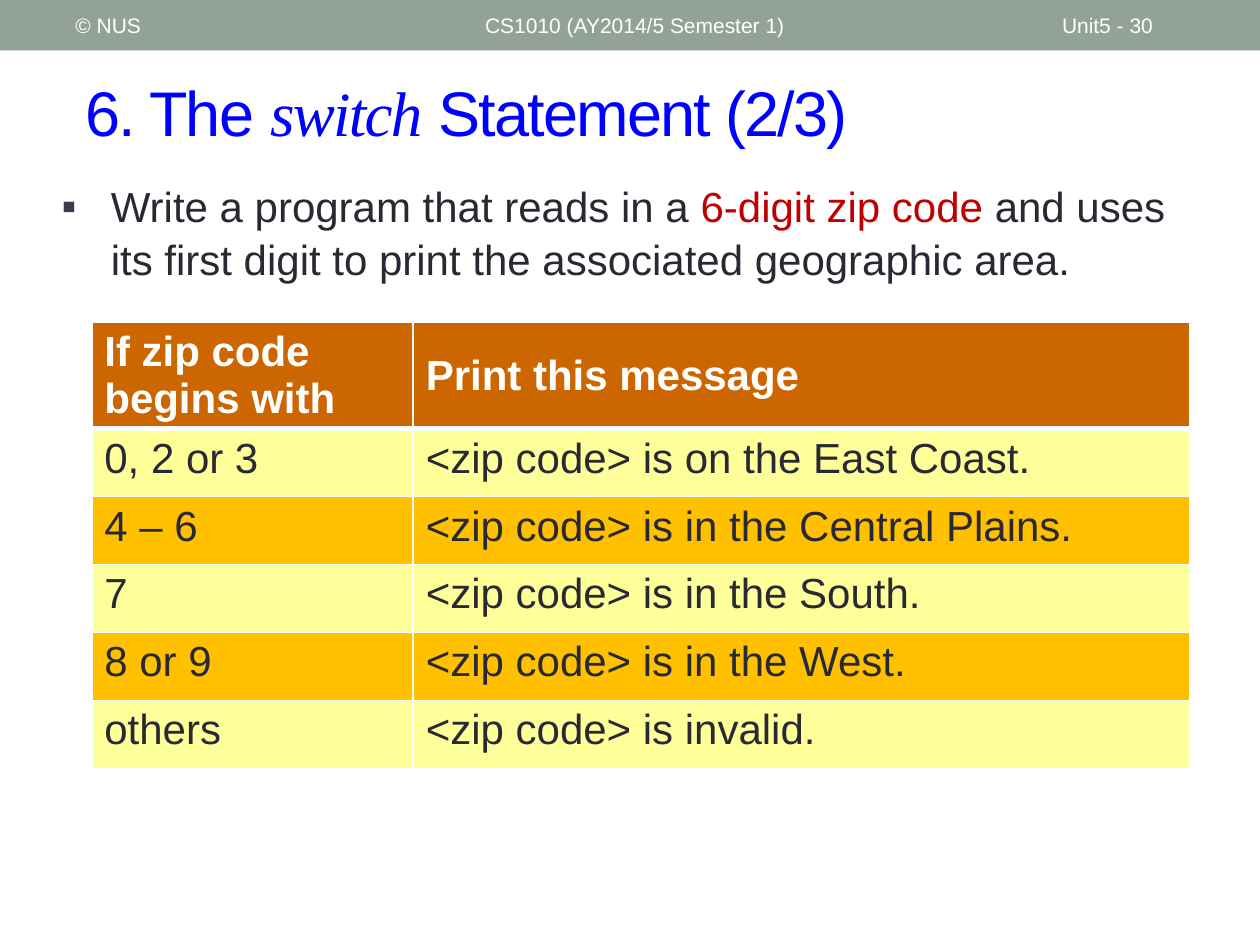
from dataclasses import dataclass
from lxml import etree
from pptx import Presentation
from pptx import util as u
from pptx.dml.color import RGBColor
from pptx.enum import shapes, text
from pptx.oxml.ns import qn


@dataclass(frozen=True)
class Theme:
    sans: str = "Arial"
    serif: str = "Times New Roman"
    ink: str = "292934"
    white: str = "FFFFFF"
    blue: str = "0000FF"
    red: str = "C00000"
    bar: str = "93A299"
    dot: str = "3B3B4B"
    head: str = "CC6600"
    rows: tuple = ("FFFF99", "FFC000")
    big: int = 36
    mid: int = 24
    small: int = 12


T = Theme()

# Content: each run is (text, format changes)
TITLE = [("6. The ", {}),
         ("switch", {"face": T.serif, "italic": True}),
         (" Statement (2/3)", {})]
BODY = [("Write a program that reads in a ", {}),
        ("6-digit zip code ", {"color": T.red}),
        ("and uses its first digit to print the associated geographic area.", {})]
STRIP = [("© NUS", 1.27, 8.05),
         ("CS1010 (AY2014/5 Semester 1)", 9.53, 11.43),
         ("Unit5 - 30", 21.16, 2.97)]
TABLE = [("If zip code begins with", "Print this message"),
         ("0, 2 or 3", "<zip code> is on the East Coast."),
         ("4 – 6", "<zip code> is in the Central Plains."),
         ("7", "<zip code> is in the South."),
         ("8 or 9", "<zip code> is in the West."),
         ("others", "<zip code> is invalid.")]
COLS = (6.48, 15.65)
HEAD_H, ROW_H = 2.13, 1.37


def rgb(code):
    return RGBColor.from_string(code)


def box(*sides):
    return [u.Cm(side) for side in sides]


def place(shape, *sides):
    shape.left, shape.top, shape.width, shape.height = box(*sides)


def write(para, words, face=T.sans, size=T.mid, color=T.ink,
          bold=False, italic=False, track=None):
    run = para.add_run()
    run.text = words
    font = run.font
    font.name, font.size = face, u.Pt(size)
    font.bold, font.italic = bold, italic
    font.color.rgb = rgb(color)
    if track is not None:
        run._r.get_or_add_rPr().set("spc", str(track * 100))


def setup(frame, anchor):
    frame.word_wrap = True
    frame.auto_size = text.MSO_AUTO_SIZE.NONE
    frame.vertical_anchor = anchor
    para = frame.paragraphs[0]
    para.alignment = text.PP_ALIGN.LEFT
    para.space_before = u.Pt(0)
    return para


def bullet(para, mark, color, indent):
    props = para._p.get_or_add_pPr()
    props.set("marL", str(u.Cm(indent)))
    props.set("indent", str(-u.Cm(indent)))
    tint = etree.SubElement(props, qn("a:buClr"))
    etree.SubElement(tint, qn("a:srgbClr"), val=color)
    etree.SubElement(props, qn("a:buFont"), typeface=T.sans)
    etree.SubElement(props, qn("a:buChar"), char=mark)


def border(cell, low):
    props = cell._tc.get_or_add_tcPr()
    for side, width in (("L", 1), ("R", 1), ("T", 1), ("B", low)):
        line = etree.SubElement(props, qn("a:ln" + side), w=str(u.Pt(width)))
        fill = etree.SubElement(line, qn("a:solidFill"))
        etree.SubElement(fill, qn("a:srgbClr"), val=T.white)


def main():
    deck = Presentation()
    deck.slide_width, deck.slide_height = box(25.4, 19.05)
    slide = deck.slides.add_slide(deck.slide_layouts[1])
    mid = text.MSO_ANCHOR.MIDDLE
    top = text.MSO_ANCHOR.TOP

    # Header strip
    bar = slide.shapes.add_shape(shapes.MSO_SHAPE.RECTANGLE, *box(0, 0, 25.4, 1.02))
    bar.shadow.inherit = False
    bar.fill.solid()
    bar.fill.fore_color.rgb = rgb(T.bar)
    bar.line.fill.background()
    for words, left, width in STRIP:
        label = slide.shapes.add_textbox(*box(left, 0.05, width, 0.91))
        write(setup(label.text_frame, mid), words, size=T.small, color=T.white)

    # Title
    title = slide.shapes.title
    place(title, 1.47, 1.07, 23.29, 2.34)
    para = setup(title.text_frame, mid)
    for words, look in TITLE:
        write(para, words, size=T.big, color=T.blue, track=-1, **look)

    # Task
    body = slide.placeholders[1]
    place(body, 0.99, 3.48, 23.37, 2.41)
    para = setup(body.text_frame, top)
    para.line_spacing = 1.04
    bullet(para, "▪", T.dot, 0.99)
    for words, look in BODY:
        write(para, words, **look)

    # Zip code table
    high = HEAD_H + ROW_H * (len(TABLE) - 1)
    grid = slide.shapes.add_table(len(TABLE), len(COLS),
                                  *box(1.85, 6.5, sum(COLS), high)).table
    for col, width in zip(grid.columns, COLS):
        col.width = u.Cm(width)
    for r, row in enumerate(TABLE):
        head = r == 0
        grid.rows[r].height = u.Cm(HEAD_H if head else ROW_H)
        for c, words in enumerate(row):
            cell = grid.cell(r, c)
            border(cell, 3 if head else 1)
            cell.fill.solid()
            cell.fill.fore_color.rgb = rgb(T.head if head else T.rows[(r - 1) % 2])
            cell.vertical_anchor = mid if head else top
            write(cell.text_frame.paragraphs[0], words, bold=head,
                  color=T.white if head else T.ink)

    deck.save("out.pptx")


if __name__ == "__main__":
    main()
